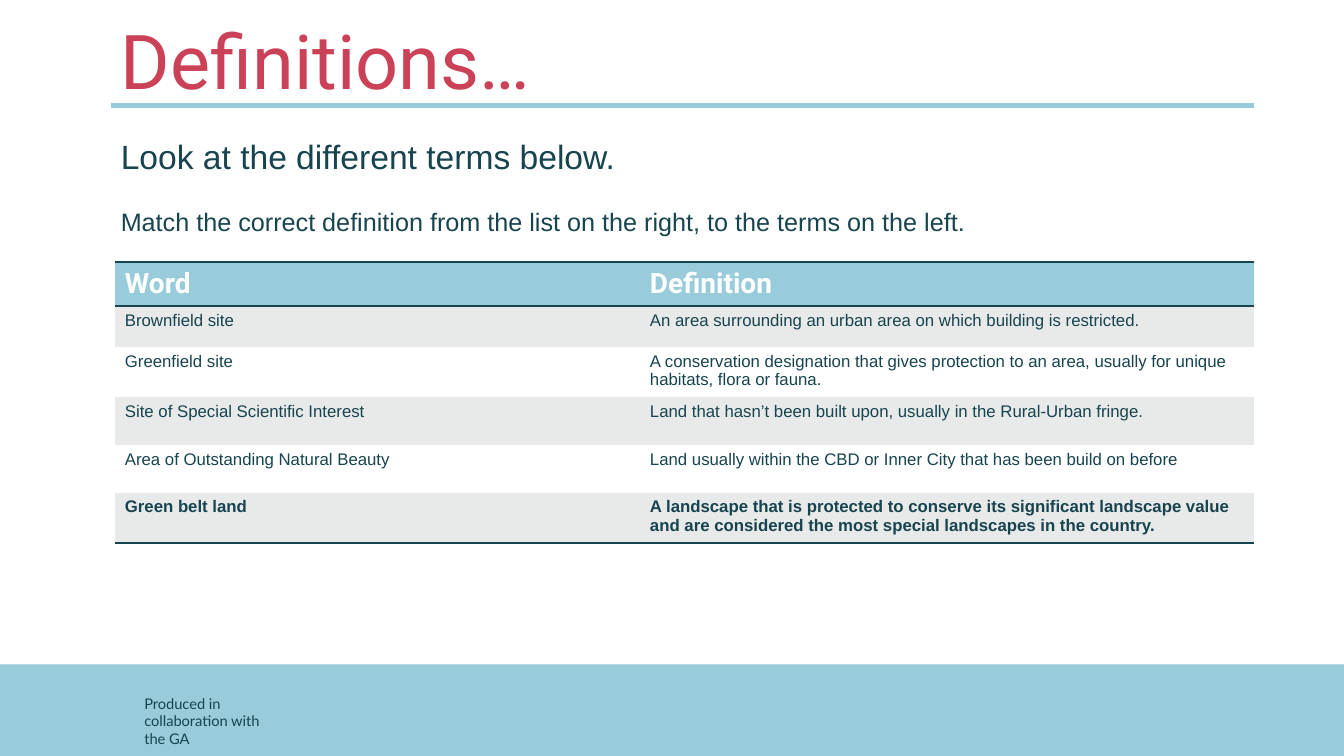
import pptx
import pptx.util
import pptx.dml.color
import pptx.enum.shapes
import pptx.enum.text
import pptx.oxml
import pptx.oxml.ns

Pt = pptx.util.Pt
RGBColor = pptx.dml.color.RGBColor

TEAL = RGBColor(0x17, 0x44, 0x4F)
SKY = RGBColor(0x98, 0xCC, 0xDB)
CRIMSON = RGBColor(0xCB, 0x41, 0x57)
BAND = RGBColor(0xE8, 0xE9, 0xE9)
WHITE = RGBColor(0xFF, 0xFF, 0xFF)

COLUMN_WIDTHS = [204.5, 170.6, 438.5]
ROW_HEIGHTS = [30.7, 29.3] + [34.1] * 4
ROWS = [
    ("Word", "Definition"),
    ("Brownfield site",
     "An area surrounding an urban area on which building is restricted."),
    ("Greenfield site",
     "A conservation designation that gives protection to an area, usually for unique "
     "habitats, flora or fauna."),
    ("Site of Special Scientific Interest",
     "Land that hasn’t been built upon, usually in the Rural-Urban fringe."),
    ("Area of Outstanding Natural Beauty",
     "Land usually within the CBD or Inner City that has been build on before"),
    ("Green belt land",
     "A landscape that is protected to conserve its significant landscape value and are "
     "considered the most special landscapes in the country."),
]


def format_paragraph(p, font, size, color, bold=False):
    for r in p.runs:
        r.font.name = font
        r.font.size = Pt(size)
        r.font.color.rgb = color
        r.font.bold = bold


def add_text(s, box, lines, font, sizes, color, gap=0):
    tf = s.shapes.add_textbox(*map(Pt, box)).text_frame
    tf.word_wrap = True
    tf.text = "\n".join(lines)
    for i, (p, size) in enumerate(zip(tf.paragraphs, sizes)):
        if i:
            p.space_before = Pt(gap)
        format_paragraph(p, font, size, color)
    return tf


def add_footer_band(s):
    sp = s.shapes.add_shape(pptx.enum.shapes.MSO_SHAPE.RECTANGLE,
                            Pt(0), Pt(474.5), Pt(960), Pt(65.5))
    sp.shadow.inherit = False
    sp.fill.solid()
    sp.fill.fore_color.rgb = SKY
    sp.line.fill.background()


def add_rule(s, left, right, y):
    line = s.shapes.add_connector(pptx.enum.shapes.MSO_CONNECTOR.STRAIGHT,
                                  Pt(left), Pt(y), Pt(right), Pt(y))
    line.line.color.rgb = SKY
    line.line.width = Pt(3.5)
    line._element.spPr.append(pptx.oxml.parse_xml(
        f"<a:effectLst {pptx.oxml.ns.nsdecls('a')}/>"))


def set_borders(cell, ruled_sides):
    tcPr = cell._tc.get_or_add_tcPr()
    for i, side in enumerate(("lnL", "lnR", "lnT", "lnB")):
        if side in ruled_sides:
            width = Pt(2)
            paint = f'<a:solidFill><a:srgbClr val="{TEAL}"/></a:solidFill>'
        else:
            width = 0
            paint = "<a:noFill/>"
        tcPr.insert(i, pptx.oxml.parse_xml(
            f'<a:{side} {pptx.oxml.ns.nsdecls("a")} w="{width}">{paint}</a:{side}>'))


def add_definitions_table(s, left, top):
    table = s.shapes.add_table(len(ROWS), len(COLUMN_WIDTHS), Pt(left), Pt(top),
                               Pt(sum(COLUMN_WIDTHS)), Pt(sum(ROW_HEIGHTS))).table
    for column, width in zip(table.columns, COLUMN_WIDTHS):
        column.width = Pt(width)
    last = len(ROWS) - 1
    for i, (word, definition) in enumerate(ROWS):
        table.rows[i].height = Pt(ROW_HEIGHTS[i])
        sides = {0: ("lnT", "lnB"), 1: ("lnT",), last: ("lnB",)}.get(i, ())
        for j, text in enumerate((word, "", definition)):
            cell = table.cell(i, j)
            cell.fill.solid()
            cell.fill.fore_color.rgb = SKY if i == 0 else BAND if i % 2 else WHITE
            set_borders(cell, sides)
            if text:
                cell.text_frame.text = text
                p = cell.text_frame.paragraphs[0]
                if i == 0:
                    format_paragraph(p, "Roboto", 20, WHITE, True)
                else:
                    format_paragraph(p, "Arial", 12, TEAL, i == last)


def main():
    prs = pptx.Presentation()
    prs.slide_width = Pt(960)
    prs.slide_height = Pt(540)
    s = prs.slides.add_slide(prs.slide_layouts[6])

    add_footer_band(s)
    add_text(s, (96, 492.5, 98.6, 44.6), ["Produced in collaboration with the GA"],
             "Lato", [10.5], TEAL)
    add_rule(s, 79.2, 895.5, 75.4)
    add_definitions_table(s, 82, 187.2)

    title = add_text(s, (79.2, 5, 815.8, 70.6), ["Definitions…"], "Roboto", [54], CRIMSON)
    title.vertical_anchor = pptx.enum.text.MSO_ANCHOR.BOTTOM
    title.margin_bottom = Pt(1)

    intro = add_text(s, (79.2, 92.2, 732.2, 78.5),
                     ["Look at the different terms below.",
                      "Match the correct definition from the list on the right, "
                      "to the terms on the left."],
                     "Arial", [24, 18], TEAL, gap=21)
    intro.margin_top = Pt(5)

    prs.save("out.pptx")


if __name__ == "__main__":
    main()
